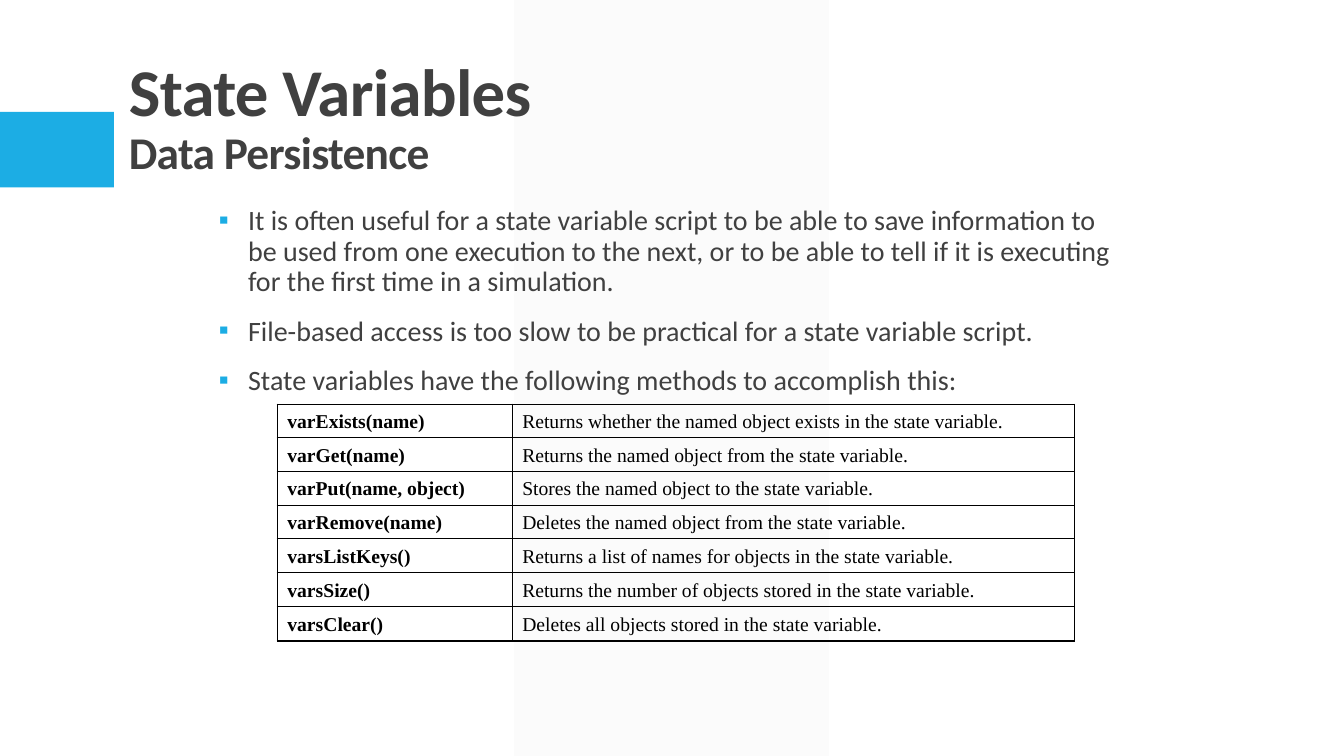
"""Build the slide on data persistence in state variables."""
from dataclasses import dataclass

from lxml import etree
from pptx import Presentation
from pptx.dml.color import RGBColor
from pptx.enum import shapes, text
from pptx.oxml import ns
from pptx.util import Inches, Pt


@dataclass(frozen=True)
class Theme:
    ink: str = "404040"
    accent: str = "1CADE4"
    band: str = "F2F2F2"
    grid: str = "000000"
    sans: str = "Calibri"
    serif: str = "Times New Roman"
    title: float = 47.7
    subtitle: float = 32.4
    body: float = 20
    table: float = 14
    grid_line: float = 1


@dataclass(frozen=True)
class Area:
    left: float
    top: float
    width: float
    height: float

    def inches(self) -> tuple:
        return tuple(map(Inches, (self.left, self.top, self.width, self.height)))


@dataclass(frozen=True)
class Panel:
    kind: shapes.MSO_SHAPE
    area: Area
    color: str
    opacity: int


@dataclass(frozen=True)
class Method:
    call: str
    purpose: str
    height: float = 0.31


THEME = Theme()
PANELS = (
    Panel(shapes.MSO_SHAPE.PARALLELOGRAM, Area(5.1, 0, 3.12, 7.5), THEME.band, 30),
    Panel(shapes.MSO_SHAPE.RECTANGLE, Area(0, 1.11, 1.13, 0.75), THEME.accent, 100),
)
TITLE_LINES = (("State Variables", THEME.title), ("Data Persistence", THEME.subtitle))
POINTS = (
    "It is often useful for a state variable script to be able to save information to "
    "be used from one execution to the next, or to be able to tell if it is executing "
    "for the first time in a simulation.",
    "File-based access is too slow to be practical for a state variable script.",
    "State variables have the following methods to accomplish this:",
)
METHODS = (
    Method("varExists(name)", "Returns whether the named object exists in the state variable."),
    Method("varGet(name)", "Returns the named object from the state variable."),
    Method("varPut(name, object)", "Stores the named object to the state variable."),
    Method("varRemove(name)", "Deletes the named object from the state variable."),
    Method("varsListKeys()", "Returns a list of names for objects in the state variable."),
    Method("varsSize()", "Returns the number of objects stored in the state variable.", 0.34),
    Method("varsClear()", "Deletes all objects stored in the state variable.", 0.34),
)
COLUMN_WIDTHS = (2.33, 5.58)


def add_element(parent, tag: str, **attributes: str):
    return etree.SubElement(parent, ns.qn(tag), attributes)


def add_span(para, words: str, size: float, face: str, color: str, bold: bool = False):
    span = para.add_run()
    span.text = words
    span.font.size = Pt(size)
    span.font.name = face
    span.font.bold = bold
    span.font.color.rgb = RGBColor.from_string(color)
    return span


def draw_panel(page, panel: Panel) -> None:
    shape = page.shapes.add_shape(panel.kind, *panel.area.inches())
    shape.shadow.inherit = False
    if panel.kind == shapes.MSO_SHAPE.PARALLELOGRAM:
        shape.adjustments[0] = 0
    shape.fill.solid()
    shape.fill.fore_color.rgb = RGBColor.from_string(panel.color)
    shape.line.fill.background()
    if panel.opacity < 100:
        color = shape.fill._xPr.find(f".//{ns.qn('a:srgbClr')}")
        add_element(color, "a:alpha", val=str(panel.opacity * 1000))


def draw_title(page, area: Area) -> None:
    frame = page.shapes.add_textbox(*area.inches()).text_frame
    frame.word_wrap = True
    frame.vertical_anchor = text.MSO_ANCHOR.BOTTOM
    para = frame.paragraphs[0]
    para.line_spacing = 0.9
    for index, (words, size) in enumerate(TITLE_LINES):
        if index:
            para.add_line_break()
        span = add_span(para, words, size, THEME.sans, THEME.ink, bold=True)
        span.font._element.set("spc", "-50")


def draw_points(page, area: Area) -> None:
    frame = page.shapes.add_textbox(*area.inches()).text_frame
    frame.word_wrap = True
    frame.margin_left = frame.margin_right = 0
    for index, words in enumerate(POINTS):
        para = frame.add_paragraph() if index else frame.paragraphs[0]
        para.line_spacing = 0.9
        para.space_before = Pt(12 if index else 0)
        para.space_after = Pt(2)
        properties = para._p.get_or_add_pPr()
        indent = Inches(0.29)
        properties.set("marL", str(indent))
        properties.set("indent", str(-indent))
        bullet_color = add_element(properties, "a:buClr")
        add_element(bullet_color, "a:srgbClr", val=THEME.accent)
        add_element(properties, "a:buFont", typeface=THEME.sans)
        add_element(properties, "a:buChar", char="▪")
        add_span(para, words, THEME.body, THEME.sans, THEME.ink)


def style_cell(cell) -> None:
    properties = cell._tc.get_or_add_tcPr()
    for side in ("a:lnL", "a:lnR", "a:lnT", "a:lnB"):
        line = add_element(properties, side, w=str(Pt(THEME.grid_line)))
        fill = add_element(line, "a:solidFill")
        add_element(fill, "a:srgbClr", val=THEME.grid)
    cell.fill.background()
    cell.vertical_anchor = text.MSO_ANCHOR.BOTTOM


def draw_methods(page, area: Area) -> None:
    frame = page.shapes.add_table(len(METHODS), len(COLUMN_WIDTHS), *area.inches())
    table = frame.table
    table.first_row = table.horz_banding = False
    for column, width in zip(table.columns, COLUMN_WIDTHS):
        column.width = Inches(width)
    for row, method in zip(table.rows, METHODS):
        row.height = Inches(method.height)
        for index, words in enumerate((method.call, method.purpose)):
            cell = row.cells[index]
            style_cell(cell)
            para = cell.text_frame.paragraphs[0]
            add_span(para, words, THEME.table, THEME.serif, THEME.grid, bold=index == 0)


def main() -> None:
    deck = Presentation()
    deck.slide_width, deck.slide_height = Inches(13.33), Inches(7.5)
    page = deck.slides.add_slide(deck.slide_layouts[6])
    for panel in PANELS:
        draw_panel(page, panel)
    draw_points(page, Area(2.17, 2, 8.92, 2.08))
    draw_methods(page, Area(2.75, 4.01, 7.92, 2.34))
    draw_title(page, Area(1.18, 0.58, 11.49, 1.25))
    deck.save("out.pptx")


if __name__ == "__main__":
    main()
